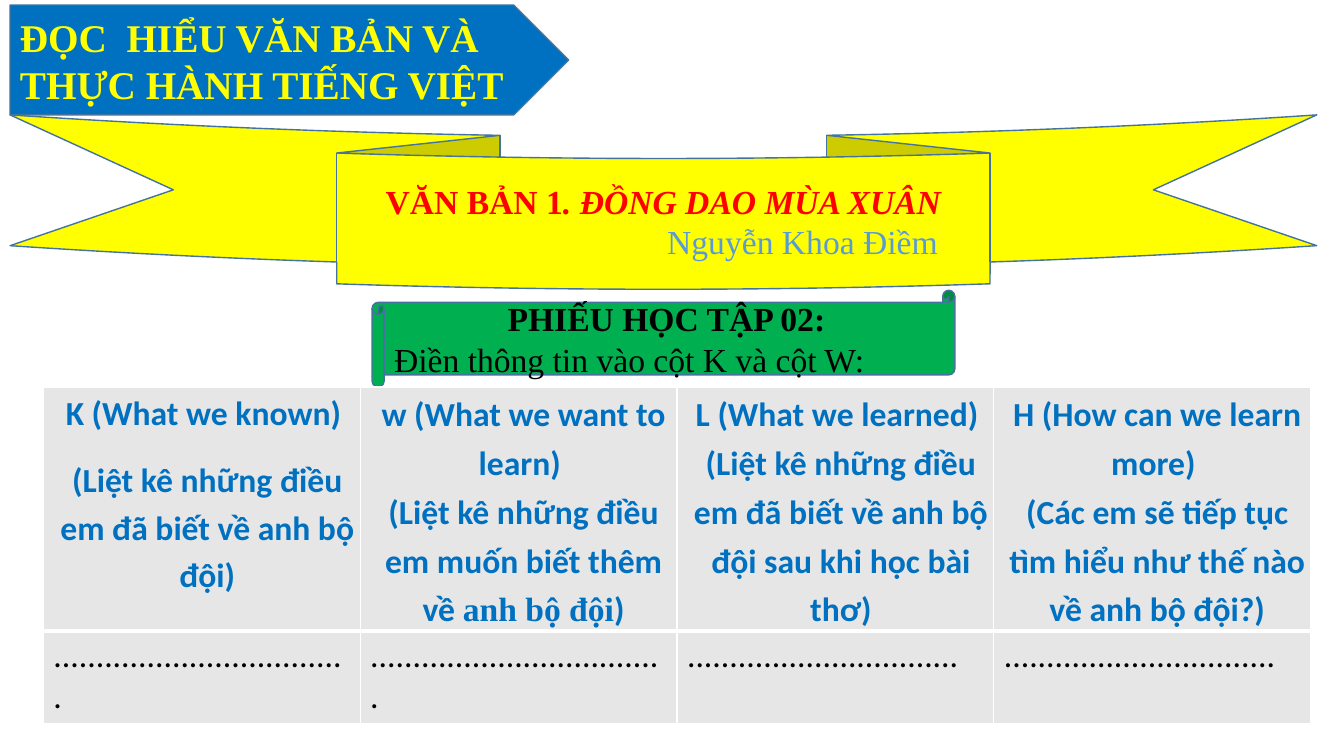
"""Builds the reading lesson slide with its K-W-L-H table."""
from lxml import etree
from pptx import Presentation
from pptx.dml.color import RGBColor
from pptx.enum.shapes import MSO_SHAPE
from pptx.enum.text import MSO_ANCHOR, PP_ALIGN
from pptx.oxml.ns import qn
from pptx.util import Inches, Pt

RIBBON = MSO_SHAPE.CURVED_DOWN_RIBBON
ARROW = MSO_SHAPE.PENTAGON
SCROLL = MSO_SHAPE.HORIZONTAL_SCROLL
TOP, MIDDLE, BOTTOM = MSO_ANCHOR.TOP, MSO_ANCHOR.MIDDLE, MSO_ANCHOR.BOTTOM
LEFT, CENTER = PP_ALIGN.LEFT, PP_ALIGN.CENTER

COLORS = {
    "yellow": "FFFF00", "red": "FF0000", "blue": "0070C0", "sky": "5B9BD5",
    "green": "00B050", "edge": "43739E", "gray": "E7E6E6",
    "black": "000000", "white": "FFFFFF",
}
SERIF, SANS = "Times New Roman", "Calibri"


def color(name):
    """Return the named colour."""
    return RGBColor.from_string(COLORS[name])


def write(para, text, size=24, font=SERIF, ink="black", bold=False, slant=False,
          align=LEFT, indent=0, line=None, before=0):
    """Add a run to a paragraph and format both."""
    run = para.add_run()
    run.text = text
    face = run.font
    face.size, face.name, face.bold, face.italic = Pt(size), font, bold, slant
    face.color.rgb = color(ink)
    para.alignment = align
    para.space_before = Pt(before)
    if line:
        para.line_spacing = line
    para._p.get_or_add_pPr().set("marL", str(Inches(indent)))


def fill_text(frame, paras, **base):
    """Write paragraphs, each a list of (text, format) runs."""
    for num, runs in enumerate(paras):
        para = frame.add_paragraph() if num else frame.paragraphs[0]
        for text, form in runs:
            write(para, text, **{**base, **form})


class Deck:
    """Holds the style and the current slide."""

    def __init__(self):
        """Start a deck with one blank slide."""
        self.show = Presentation()
        self.show.slide_width, self.show.slide_height = Inches(13.33), Inches(7.5)
        self.slide = self.show.slides.add_slide(self.show.slide_layouts[6])

    def shape(self, kind, box, fill, paras, **base):
        """Add a filled shape with text."""
        item = self.slide.shapes.add_shape(kind, *map(Inches, box))
        item.shadow.inherit = False
        item.fill.solid()
        item.fill.fore_color.rgb = color(fill)
        item.line.color.rgb = color("edge")
        item.line.width = Pt(1)
        item.text_frame.word_wrap = True
        item.text_frame.vertical_anchor = MIDDLE
        fill_text(item.text_frame, paras, **base)

    def table(self, box, heights, cols):
        """Add an empty table and return it."""
        grid = self.slide.shapes.add_table(len(heights), cols, *map(Inches, box)).table
        for col in grid.columns:
            col.width = Inches(box[2] / cols)
        for row, height in zip(grid.rows, heights):
            row.height = Inches(height)
        return grid

    def cell(self, cell, paras, anchor, edges, **base):
        """Fill, border and write one cell."""
        cell.fill.solid()
        cell.fill.fore_color.rgb = color("gray")
        cell.vertical_anchor = anchor
        props = cell._tc.get_or_add_tcPr()
        for spot, (side, width) in enumerate(zip("LRTB", edges)):
            edge = etree.Element(qn(f"a:ln{side}"), w=str(Pt(width)))
            solid = etree.SubElement(edge, qn("a:solidFill"))
            etree.SubElement(solid, qn("a:srgbClr"), val=COLORS["white"])
            props.insert(spot, edge)
        fill_text(cell.text_frame, paras, **base)


def main():
    """Build and save the slide."""
    deck = Deck()
    deck.shape(RIBBON, (0.1, 1.14, 12.96, 1.73), "yellow", [
        [("VĂN BẢN 1", {}), (". ĐỒNG DAO MÙA XUÂN", {"slant": True})],
        [("Nguyễn Khoa Điềm", {"ink": "sky", "bold": False, "indent": 2.76})],
    ], ink="red", bold=True, align=CENTER)
    deck.shape(ARROW, (0.1, 0.05, 5.54, 1.09), "blue", [
        [("ĐỌC  HIỂU VĂN BẢN VÀ", {})],
        [("THỰC HÀNH TIẾNG VIỆT", {})],
    ], size=28, ink="yellow", bold=True)
    deck.shape(SCROLL, (3.69, 2.88, 5.78, 0.96), "green", [
        [("PHIẾU HỌC TẬP 02:", {"bold": True, "align": CENTER})],
        [("Điền thông tin vào cột K và cột W:", {})],
    ])

    heads = [
        ("K (What we known) ",
         [("(Liệt kê những điều em đã biết về anh bộ đội)", {})],
         TOP, {"line": 1.17, "before": 13, "indent": 0.11}, 35),
        ("w (What we want to learn) ",
         [("(Liệt kê những điều em muốn biết thêm về ", {}),
          ("anh bộ đội", {"font": SERIF}), (")", {})],
         MIDDLE, {"line": 1.19, "indent": 0.1}, 35),
        ("L (What we learned) ",
         [("(Liệt kê những điều em đã biết về anh bộ đội sau khi học bài thơ)", {})],
         MIDDLE, {"line": 1.19, "indent": 0.11}, 32),
        ("H (How can we learn more) ",
         [("(Các em sẽ tiếp tục tìm hiểu như thế nào về anh bộ đội?)", {})],
         BOTTOM, {"line": 1.19, "indent": 0.1}, 32),
    ]
    grid = deck.table((0.43, 3.84, 12.57, 3.32), (2.4, 0.92), len(heads))
    for col, (head, task, anchor, form, dots) in enumerate(heads):
        cell = grid.cell(0, col)
        cell.margin_left = cell.margin_right = Inches(0.01)
        cell.margin_top = cell.margin_bottom = 0
        deck.cell(cell, [[(head, {})], task], anchor, (1, 1, 1, 3),
                  font=SANS, ink="blue", bold=True, align=CENTER, **form)
        deck.cell(grid.cell(1, col), [[("." * dots, {})]], TOP, (1, 1, 3, 1),
                  font=SANS)
    deck.show.save("out.pptx")


if __name__ == "__main__":
    main()
